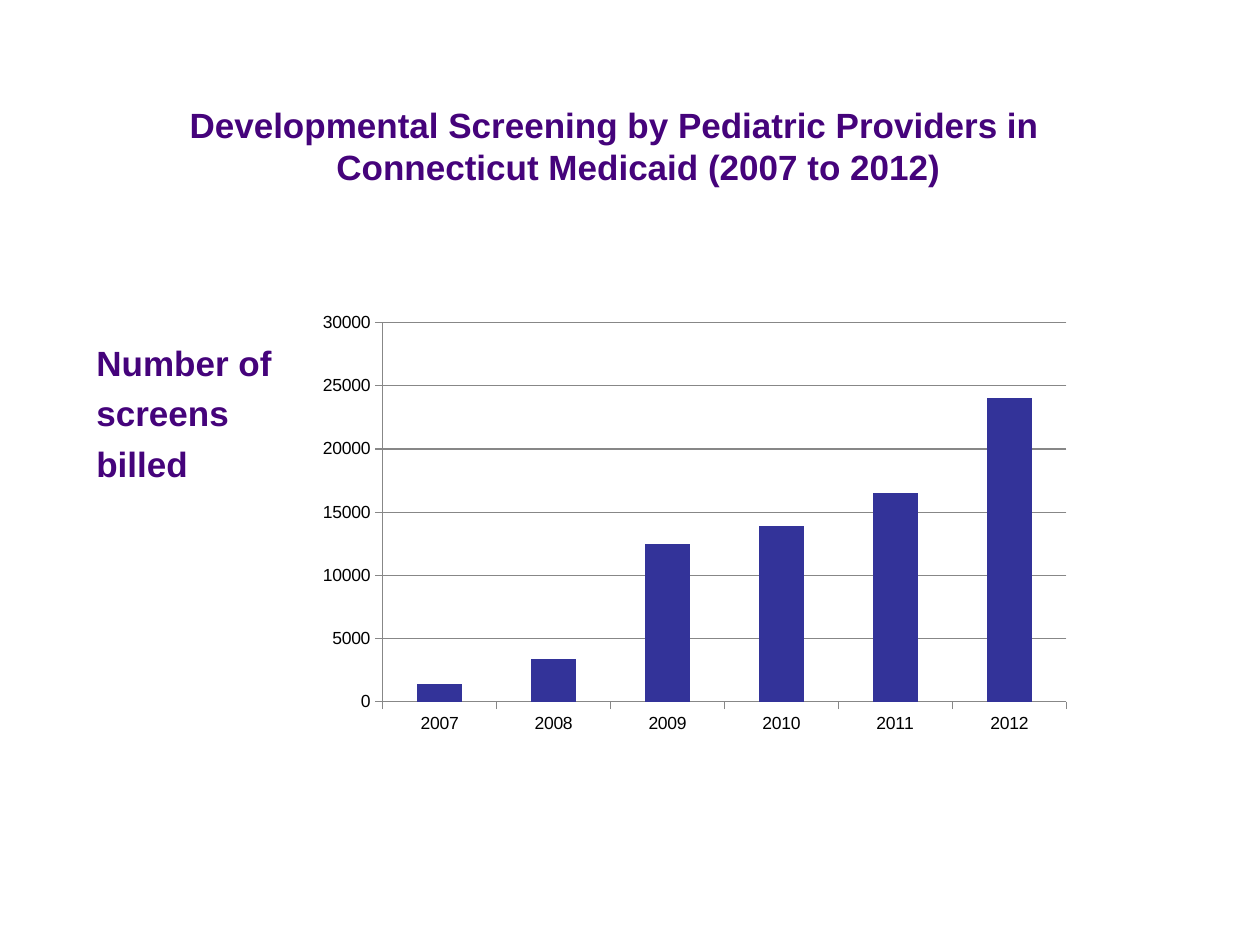
from dataclasses import dataclass

from lxml.etree import SubElement
from pptx import Presentation
from pptx.chart.data import CategoryChartData
from pptx.dml.color import RGBColor
from pptx.enum.chart import XL_CHART_TYPE, XL_TICK_MARK
from pptx.enum.text import PP_ALIGN
from pptx.oxml.ns import qn
from pptx.util import Pt

EMU_PER_PX = 914400 // 126


@dataclass(frozen=True)
class Theme:
    """Colours and type sizes of the slide."""
    font: str = "Arial"
    heading: RGBColor = RGBColor(0x45, 0x03, 0x7B)
    bar: RGBColor = RGBColor(0x33, 0x33, 0x99)
    rule: RGBColor = RGBColor(0x87, 0x87, 0x87)
    label: RGBColor = RGBColor(0, 0, 0)
    heading_size: int = 20
    label_size: int = 10


THEME = Theme()
SCREENS = {"2007": 1400, "2008": 3400, "2009": 12500,
           "2010": 13900, "2011": 16500, "2012": 24000}


def px(length):
    """Turn pixels into EMU."""
    return length * EMU_PER_PX


def style_font(font, size, color, bold=False):
    """Set the face, size, colour and weight of a font."""
    font.name, font.size, font.bold = THEME.font, Pt(size), bold
    font.color.rgb = color


def add_text(page, text, box, align=PP_ALIGN.LEFT, space=0, hanging=0):
    """Write one heading paragraph per line of text in a box."""
    frame = page.shapes.add_textbox(*map(px, box)).text_frame
    frame.word_wrap = True
    for index, line in enumerate(text.split("\n")):
        para = frame.paragraphs[0] if index == 0 else frame.add_paragraph()
        para.alignment = align
        para.space_before = Pt(space if index else 0)
        properties = para._p.get_or_add_pPr()
        properties.set("marL", str(px(hanging)))
        properties.set("indent", str(px(-hanging)))
        span = para.add_run()
        span.text = line
        style_font(span.font, THEME.heading_size, THEME.heading, bold=True)


def place_plot(chart, left, top, width, height):
    """Fix the inner plot area as fractions of the chart."""
    plot_area = chart._chartSpace.chart.plotArea
    layout = plot_area.find(qn("c:layout"))
    if layout is None:
        layout = SubElement(plot_area, qn("c:layout"))
        plot_area.insert(0, layout)
    manual = SubElement(layout, qn("c:manualLayout"))
    settings = {"layoutTarget": "inner", "xMode": "edge", "yMode": "edge",
                "x": left, "y": top, "w": width, "h": height}
    for name, value in settings.items():
        SubElement(manual, qn(f"c:{name}")).set("val", str(value))


def add_screening_chart(page, box):
    """Draw the yearly column chart in a box."""
    data = CategoryChartData()
    data.categories = list(SCREENS)
    data.add_series("Series 1", list(SCREENS.values()))
    chart = page.shapes.add_chart(
        XL_CHART_TYPE.COLUMN_CLUSTERED, *map(px, box), data).chart
    chart.has_legend = chart.has_title = False
    style_font(chart.font, THEME.label_size, THEME.label)
    plot = chart.plots[0]
    plot.gap_width, plot.vary_by_categories = 150, False
    fill = plot.series[0].format.fill
    fill.solid()
    fill.fore_color.rgb = THEME.bar
    values = chart.value_axis
    values.minimum_scale, values.maximum_scale, values.major_unit = 0, 30000, 5000
    values.has_major_gridlines = True
    for axis in (chart.category_axis, values):
        axis.major_tick_mark = XL_TICK_MARK.OUTSIDE
        axis.minor_tick_mark = XL_TICK_MARK.NONE
    for part in (chart.category_axis, values, values.major_gridlines):
        part.format.line.color.rgb = THEME.rule
        part.format.line.width = Pt(0.75)
    place_plot(chart, 0.1, 0.04, 0.88, 0.86)


def build_page(page, left, top):
    """Place the title, axis caption and chart from the content corner."""
    add_text(page, "Developmental Screening by Pediatric Providers in "
             "Connecticut Medicaid (2007 to 2012)",
             (left, top, 1061, 100), align=PP_ALIGN.CENTER, hanging=48)
    add_text(page, "Number of\nscreens\nbilled",
             (left, top + 238, 221, 160), space=5)
    add_screening_chart(page, (left + 221, top + 208, 777, 441))


def main():
    """Build and save the deck."""
    deck = Presentation()
    deck.slide_width, deck.slide_height = px(1260), px(945)
    build_page(deck.slides.add_slide(deck.slide_layouts[6]), 84, 97)
    deck.save("out.pptx")


if __name__ == "__main__":
    main()
